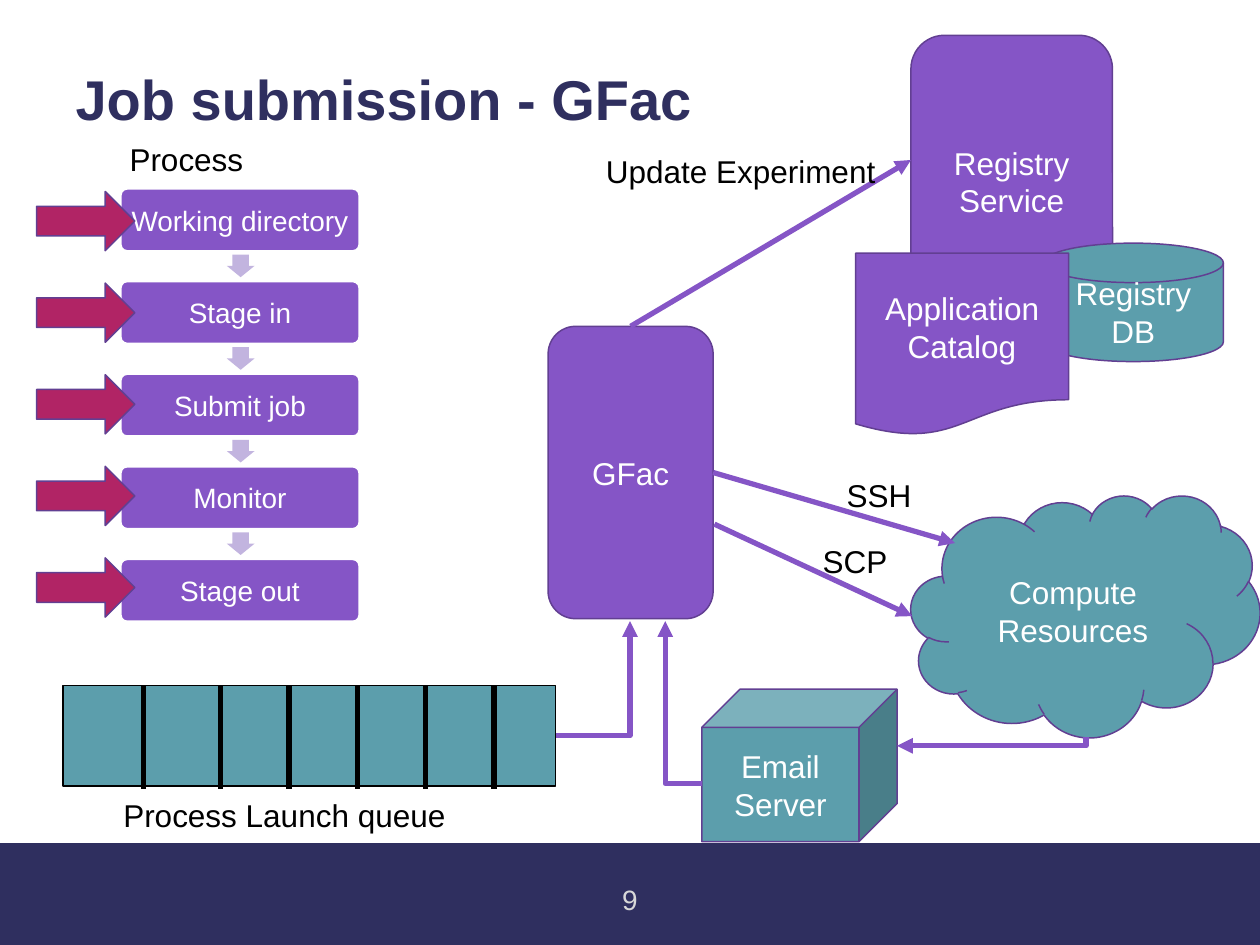
"""Build the GFac job submission slide."""
from dataclasses import dataclass

from lxml import etree
from pptx import Presentation
from pptx.dml.color import RGBColor
from pptx.enum.shapes import MSO_CONNECTOR, MSO_SHAPE
from pptx.enum.text import MSO_ANCHOR, PP_ALIGN
from pptx.oxml.ns import qn
from pptx.util import Inches, Pt

RECTANGLE = MSO_SHAPE.RECTANGLE
ROUNDED = MSO_SHAPE.ROUNDED_RECTANGLE
RIGHT_ARROW = MSO_SHAPE.RIGHT_ARROW
DOWN_ARROW = MSO_SHAPE.DOWN_ARROW
DISK = MSO_SHAPE.FLOWCHART_MAGNETIC_DISK
DOCUMENT = MSO_SHAPE.FLOWCHART_DOCUMENT
CLOUD = MSO_SHAPE.CLOUD
CUBE = MSO_SHAPE.CUBE
STRAIGHT = MSO_CONNECTOR.STRAIGHT
ELBOW = MSO_CONNECTOR.ELBOW
LEFT = PP_ALIGN.LEFT
CENTER = PP_ALIGN.CENTER
MIDDLE = MSO_ANCHOR.MIDDLE


@dataclass(frozen=True)
class Theme:
    font: str = "Arial"
    navy: str = "2F2F5F"
    white: str = "FFFFFF"
    black: str = "000000"
    purple: str = "8555C6"
    outline: str = "623F92"
    lilac: str = "C2B4DF"
    teal: str = "5C9EAC"
    crimson: str = "B12465"
    grey: str = "D8D8D8"
    title_size: int = 32
    body_size: int = 18
    small_size: int = 16
    thin: float = 0.85
    thick: float = 3


theme = Theme()


def write_text(frame, lines, size, color, alignment=LEFT, bold=False):
    for index, line in enumerate(lines):
        paragraph = frame.paragraphs[0] if index == 0 else frame.add_paragraph()
        paragraph.alignment = alignment
        run = paragraph.add_run()
        run.text = line
        run.font.name = theme.font
        run.font.size = Pt(size)
        run.font.bold = bold
        run.font.color.rgb = RGBColor.from_string(color)


def add_block(kind, box, fill, outline=theme.outline, lines=(), size=theme.body_size):
    shape = slide.shapes.add_shape(kind, *map(Inches, box))
    shape.shadow.inherit = False
    shape.fill.solid()
    shape.fill.fore_color.rgb = RGBColor.from_string(fill)
    if outline:
        shape.line.color.rgb = RGBColor.from_string(outline)
        shape.line.width = Pt(theme.thin)
    else:
        shape.line.fill.background()
    shape.text_frame.vertical_anchor = MIDDLE
    write_text(shape.text_frame, lines, size, theme.white, CENTER)
    return shape


presentation = Presentation()
presentation.slide_width = Inches(10)
presentation.slide_height = Inches(7.5)
slide = presentation.slides.add_slide(presentation.slide_layouts[5])
slide.background.fill.solid()
slide.background.fill.fore_color.rgb = RGBColor.from_string(theme.navy)

panel = add_block(RECTANGLE, (0, 0, 10, 6.69), theme.white, None)
title = slide.shapes.title
title.element.addprevious(panel.element)
title.left, title.top, title.width, title.height = map(Inches, (0.5, 0.18, 9, 1.2))
title.text_frame.vertical_anchor = MIDDLE
write_text(title.text_frame, ["Job submission - GFac"], theme.title_size, theme.navy, bold=True)

number = slide.shapes.add_textbox(Inches(4.45), Inches(6.9), Inches(1.1), Inches(0.47))
number.text_frame.word_wrap = True
number.text_frame.vertical_anchor = MIDDLE
write_text(number.text_frame, ["9"], theme.small_size, theme.grey, CENTER)

add_block(RECTANGLE, (0.5, 5.44, 3.91, 0.8), theme.teal, theme.black)

steps = ["Working directory", "Stage in", "Submit job", "Monitor", "Stage out"]
for index, step in enumerate(steps):
    top = 1.5 + 0.735 * index
    block = add_block(ROUNDED, (0.96, top, 1.89, 0.49), theme.purple, theme.white,
                      [step], theme.small_size)
    block.adjustments[0] = 0.1
    block.text_frame.margin_left = block.text_frame.margin_right = Inches(0.04)
    if index < len(steps) - 1:
        arrow = add_block(DOWN_ARROW, (1.8, top + 0.52, 0.22, 0.18), theme.lilac, None)
        arrow.adjustments[0] = 0.6
    add_block(RIGHT_ARROW, (0.29, 1.52 + 0.727 * index, 0.78, 0.47), theme.crimson)

gfac = add_block(ROUNDED, (4.35, 2.59, 1.31, 2.32), theme.purple, lines=["GFac"])
registry = add_block(ROUNDED, (7.23, 0.28, 1.6, 2.32), theme.purple,
                     lines=["Registry", "Service"])
add_block(DISK, (8.28, 1.93, 1.43, 0.94), theme.teal, lines=["Registry DB"])
add_block(DOCUMENT, (6.79, 2.01, 1.69, 1.45), theme.purple, lines=["Application Catalog"])
add_block(CLOUD, (7.23, 3.93, 2.77, 1.92), theme.teal, lines=["Compute Resources"])
add_block(CUBE, (5.57, 5.47, 1.55, 1.21), theme.teal, lines=["Email", "Server"])

dividers = [1.14] + [1.75 + 0.543 * index for index in range(5)]
lines = [(STRAIGHT, (x, 5.44, x, 6.26), theme.black, None, None, None) for x in dividers]
lines += [
    (ELBOW, (4.41, 5.84, 5, 4.93), theme.purple, "tailEnd", None, None),
    (ELBOW, (5.57, 6.22, 5.28, 4.93), theme.purple, "tailEnd", None, None),
    (ELBOW, (7.12, 5.92, 8.62, 5.85), theme.purple, "headEnd", None, None),
    (STRAIGHT, (5.66, 3.75, 7.58, 4.31), theme.purple, "tailEnd", (gfac, 3), None),
    (STRAIGHT, (5.67, 4.16, 7.24, 4.89), theme.purple, "tailEnd", None, None),
    (STRAIGHT, (5, 2.59, 7.23, 1.44), theme.purple, "tailEnd", (gfac, 0), None),
]
lines[-1] = (STRAIGHT, (5, 2.59, 7.23, 1.27), theme.purple, "tailEnd", (gfac, 0), None)
for kind, ends, color, arrowhead, begin, end in lines:
    connector = slide.shapes.add_connector(kind, *map(Inches, ends))
    connector.line.color.rgb = RGBColor.from_string(color)
    connector.line.width = Pt(theme.thick)
    properties = connector.element.spPr
    if kind == ELBOW:
        properties.find(qn("a:prstGeom")).set("prst", "bentConnector2")
    if arrowhead:
        etree.SubElement(properties.find(qn("a:ln")), qn(f"a:{arrowhead}"), type="triangle")
    etree.SubElement(properties, qn("a:effectLst"))
    if begin:
        connector.begin_connect(*begin)
    if end:
        connector.end_connect(*end)

labels = [
    ("Process", 0.93, 1.06, 1.1),
    ("Update Experiment", 4.71, 1.16, 2.36),
    ("SSH", 6.62, 3.73, 0.72),
    ("SCP", 6.43, 4.25, 0.72),
    ("Process Launch queue", 0.88, 6.27, 2.78),
]
for text, left, top, width in labels:
    label = slide.shapes.add_textbox(Inches(left), Inches(top), Inches(width), Inches(0.4))
    label.text_frame.word_wrap = False
    write_text(label.text_frame, [text], theme.body_size, theme.black)

presentation.save("out.pptx")
